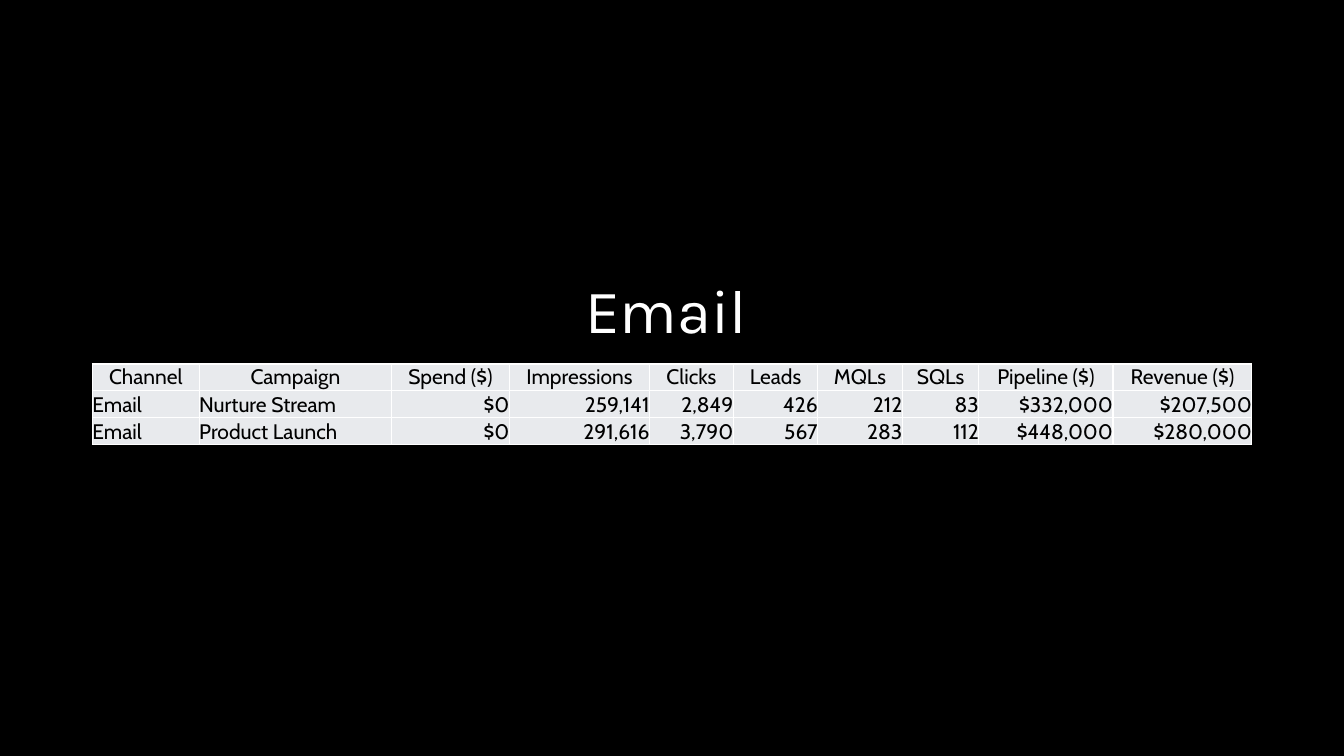
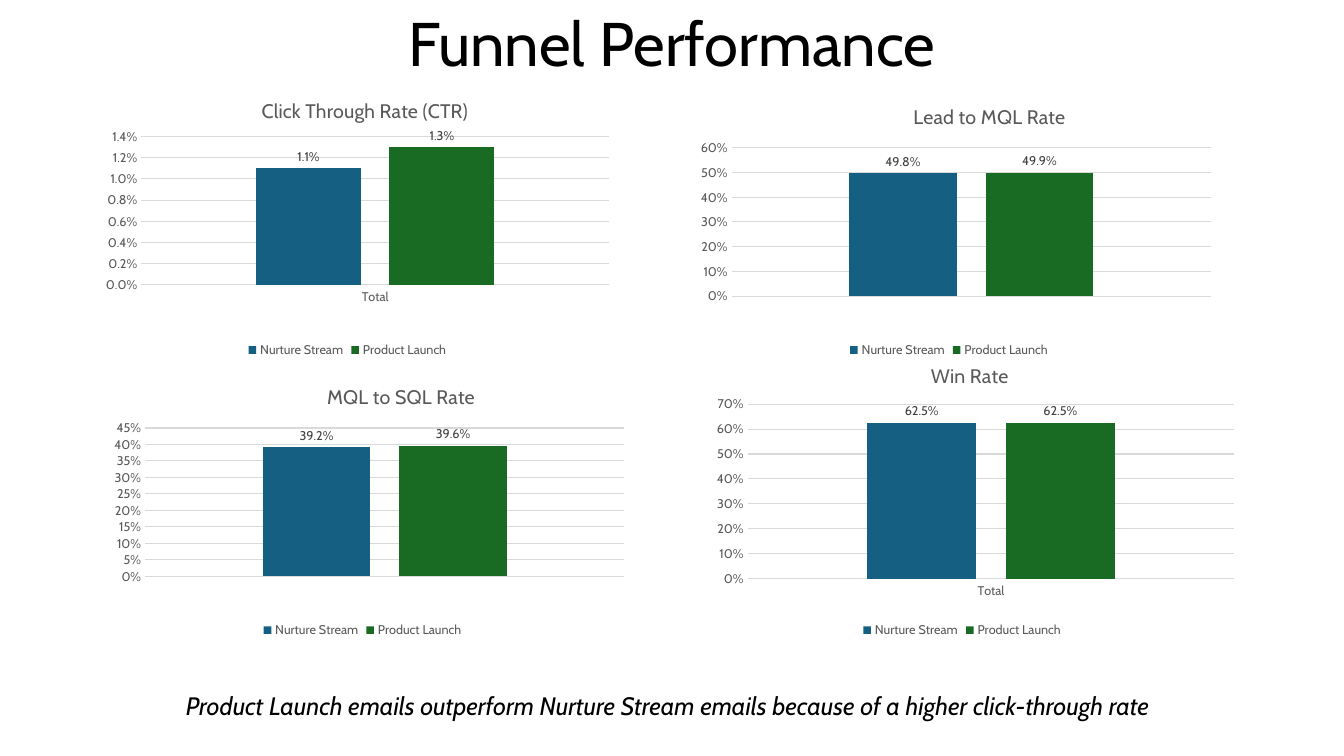
from pptx import Presentation
from pptx.chart.data import CategoryChartData
from pptx.dml.color import RGBColor
from pptx.enum.chart import XL_CHART_TYPE, XL_LABEL_POSITION, XL_LEGEND_POSITION, XL_TICK_MARK
from pptx.enum.text import MSO_ANCHOR, MSO_AUTO_SIZE, PP_ALIGN
from pptx.oxml import parse_xml
from pptx.oxml.ns import nsdecls, qn
from pptx.util import Cm, Pt

COLUMNS = XL_CHART_TYPE.COLUMN_CLUSTERED
OUTSIDE_END = XL_LABEL_POSITION.OUTSIDE_END
LEGEND_BOTTOM = XL_LEGEND_POSITION.BOTTOM
NO_TICK = XL_TICK_MARK.NONE
LEFT, CENTER, RIGHT = PP_ALIGN.LEFT, PP_ALIGN.CENTER, PP_ALIGN.RIGHT
TOP, MIDDLE, BOTTOM = MSO_ANCHOR.TOP, MSO_ANCHOR.MIDDLE, MSO_ANCHOR.BOTTOM

COLORS = {
    name: RGBColor.from_string(value)
    for name, value in {
        "black": "000000",
        "white": "FFFFFF",
        "cell": "E8EAED",
        "grid": "D9D9D9",
        "axis text": "595959",
        "label text": "404040",
        "Nurture Stream": "156082",
        "Product Launch": "196B24",
    }.items()
}
BODY_FONT = "Cabin"
TITLE_LAYOUT = 5


def style_font(font, size, color, name=BODY_FONT):
    font.name = name
    font.size = Pt(size)
    font.bold = False
    font.color.rgb = COLORS[color]


def set_layout(element, index, **places):
    """Fix a chart part at fractions of the chart's size."""
    old = element.find(qn("c:layout"))
    if old is not None:
        element.remove(old)
    target = '<c:layoutTarget val="inner"/>' if "w" in places else ""
    modes = "".join(f'<c:{key}Mode val="edge"/>' for key in "xy")
    values = "".join(f'<c:{key} val="{value}"/>' for key, value in places.items())
    element.insert(index, parse_xml(
        f"<c:layout {nsdecls('c')}><c:manualLayout>{target}{modes}{values}"
        "</c:manualLayout></c:layout>"))


deck = Presentation()
deck.slide_width = Cm(33.87)
deck.slide_height = Cm(19.05)

# Slides and titles
pages = []
for text, background, color, font_name, place in [
    ("Email", "black", "white", "Karla", (2.18, 6.05, 29.21, 3.68)),
    ("Funnel Performance", "white", "black", BODY_FONT, (2.33, 0, 29.21, 2.33)),
]:
    page = deck.slides.add_slide(deck.slide_layouts[TITLE_LAYOUT])
    page.background.fill.solid()
    page.background.fill.fore_color.rgb = COLORS[background]
    title = page.shapes.title
    title.left, title.top, title.width, title.height = map(Cm, place)
    title.text_frame.vertical_anchor = MIDDLE
    para = title.text_frame.paragraphs[0]
    para.alignment = CENTER
    para.line_spacing = 0.9
    span = para.add_run()
    span.text = text
    style_font(span.font, 44, color, font_name)
    pages.append(page)
email_page, funnel_page = pages

# Campaign table
campaign_rows = [
    ["Channel", "Campaign", "Spend ($)", "Impressions", "Clicks", "Leads",
     "MQLs", "SQLs", "Pipeline ($)", "Revenue ($)"],
    ["Email", "Nurture Stream", "$0", "259,141", "2,849", "426",
     "212", "83", "$332,000", "$207,500"],
    ["Email", "Product Launch", "$0", "291,616", "3,790", "567",
     "283", "112", "$448,000", "$280,000"],
]
column_widths = [2.69, 4.85, 2.97, 3.53, 2.11, 2.13, 2.13, 1.93, 3.38, 3.5]
row_height = 0.68
table = email_page.shapes.add_table(
    len(campaign_rows), len(column_widths), Cm(2.33), Cm(9.17),
    Cm(sum(column_widths)), Cm(row_height * len(campaign_rows))).table
table.first_row = False
table.horz_banding = False
for column, width in zip(table.columns, column_widths):
    column.width = Cm(width)
for row_index, values in enumerate(campaign_rows):
    table.rows[row_index].height = Cm(row_height)
    for column_index, value in enumerate(values):
        cell = table.cell(row_index, column_index)
        cell.margin_left = cell.margin_right = cell.margin_top = cell.margin_bottom = 0
        cell.vertical_anchor = BOTTOM if row_index else TOP
        for side in "LRTB":
            cell.fill  # the cell properties exist from here on
            cell._tc.get_or_add_tcPr().append(parse_xml(
                f'<a:ln{side} {nsdecls("a")} w="{Pt(1)}"><a:solidFill>'
                f'<a:srgbClr val="{COLORS["white"]}"/></a:solidFill></a:ln{side}>'))
        cell.fill.solid()
        cell.fill.fore_color.rgb = COLORS["cell"]
        para = cell.text_frame.paragraphs[0]
        if row_index == 0:
            para.alignment = CENTER
        else:
            para.alignment = LEFT if column_index < 2 else RIGHT
        span = para.add_run()
        span.text = value
        style_font(span.font, 15, "black")

# Funnel charts: title, its place, rates, axis format, category, frame, plot area
with_category = dict(x=0.13, y=0.21, w=0.84, h=0.52)
without_category = dict(x=0.11, y=0.25, w=0.86, h=0.52)
funnel_charts = [
    ("Lead to MQL Rate", (0.43, 0.08), (0.498, 0.499), "0%", None,
     (16.89, 1.93, 14.05, 7.19), without_category),
    ("MQL to SQL Rate", (0.43, 0.08), (0.392, 0.396), "0%", None,
     (2.11, 8.99, 14.05, 7.19), without_category),
    ("Click Through Rate (CTR)", (0.34, 0.06), (0.011, 0.013), "0.0%", "Total",
     (1.73, 1.93, 14.05, 7.19), with_category),
    ("Win Rate", (0.44, 0.06), (0.625, 0.625), "0%", "Total",
     (16.94, 8.59, 14.61, 7.59), {**with_category, "h": 0.58}),
]
for text, (title_x, title_y), rates, axis_format, category, frame, plot_area in funnel_charts:
    data = CategoryChartData(number_format="0.0%")
    data.categories = [category or "1"]
    for name, rate in zip(("Nurture Stream", "Product Launch"), rates):
        data.add_series(name, [rate])
    chart = funnel_page.shapes.add_chart(COLUMNS, *map(Cm, frame), data).chart
    style_font(chart.font, 10, "black")

    chart.has_title = True
    span = chart.chart_title.text_frame.paragraphs[0].add_run()
    span.text = text
    style_font(span.font, 14, "axis text")
    set_layout(chart.chart_title.element, 1, x=title_x, y=title_y)
    set_layout(chart.element.xpath("c:chart/c:plotArea")[0], 0, **plot_area)

    chart.has_legend = True
    chart.legend.position = LEGEND_BOTTOM
    chart.legend.include_in_layout = False
    style_font(chart.legend.font, 9, "axis text")

    for axis in (chart.category_axis, chart.value_axis):
        axis.major_tick_mark = axis.minor_tick_mark = NO_TICK
        style_font(axis.tick_labels.font, 9, "axis text")
    chart.category_axis.visible = category is not None
    chart.category_axis.format.line.color.rgb = COLORS["grid"]
    chart.category_axis.format.line.width = Pt(0.75)
    chart.value_axis.minimum_scale = 0
    chart.value_axis.format.line.fill.background()
    chart.value_axis.tick_labels.number_format = axis_format
    chart.value_axis.tick_labels.number_format_is_linked = False
    grid_line = chart.value_axis.major_gridlines.format.line
    grid_line.color.rgb = COLORS["grid"]
    grid_line.width = Pt(0.75)

    plot = chart.plots[0]
    plot.vary_by_categories = False
    plot.gap_width = 219
    plot.overlap = -27
    for series in plot.series:
        series.format.fill.solid()
        series.format.fill.fore_color.rgb = COLORS[series.name]
        labels = series.data_labels
        labels.show_value = True
        labels.position = OUTSIDE_END
        labels.number_format = "0.0%"
        labels.number_format_is_linked = False
        style_font(labels.font, 9, "label text")

# Takeaway line
box = funnel_page.shapes.add_textbox(Cm(0), Cm(17.27), Cm(33.65), Cm(1.02))
box.text_frame.word_wrap = True
box.text_frame.auto_size = MSO_AUTO_SIZE.SHAPE_TO_FIT_TEXT
para = box.text_frame.paragraphs[0]
para.alignment = CENTER
span = para.add_run()
span.text = ("Product Launch emails outperform Nurture Stream emails "
             "because of a higher click-through rate")
style_font(span.font, 18, "black")
span.font.italic = True

deck.save("out.pptx")
